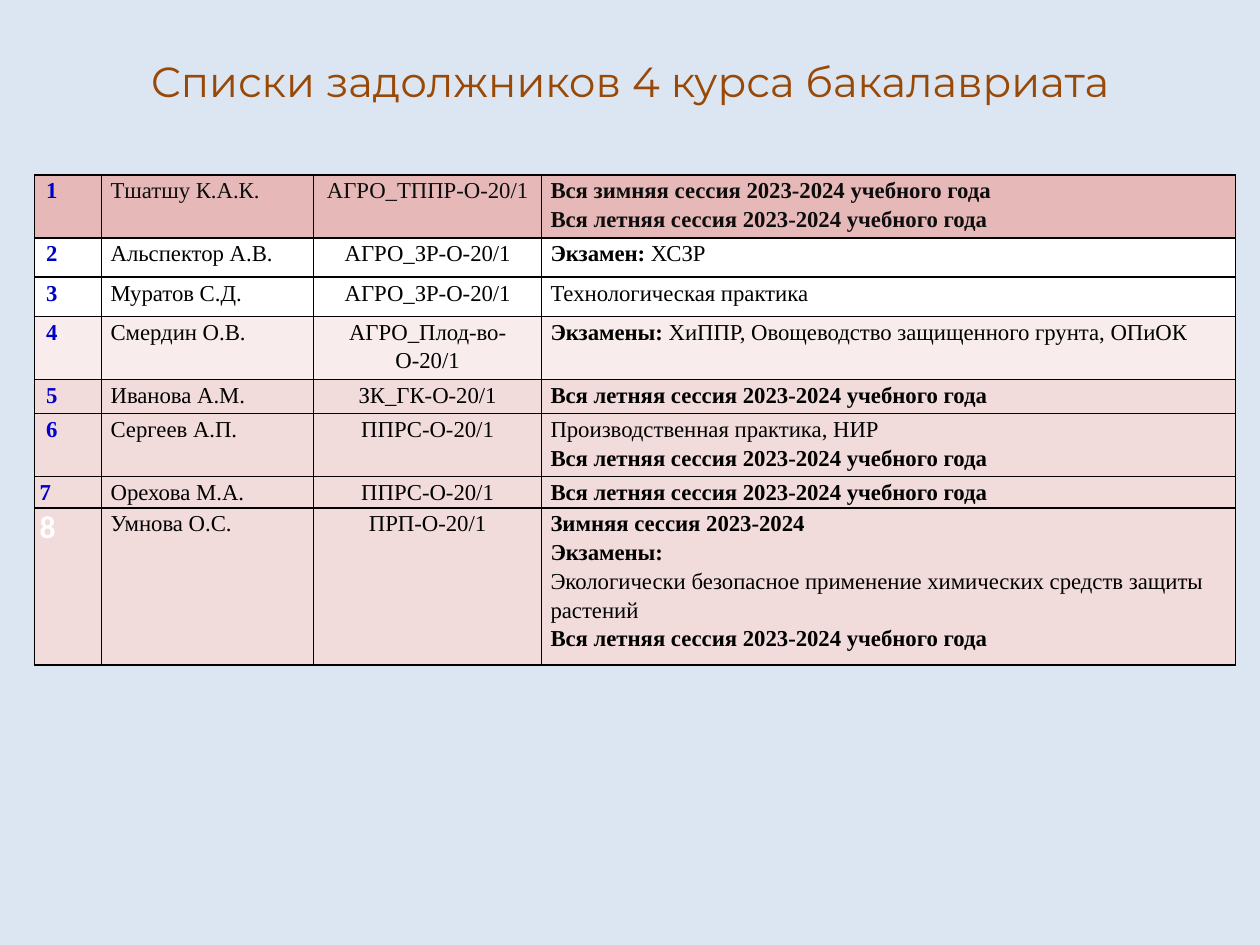
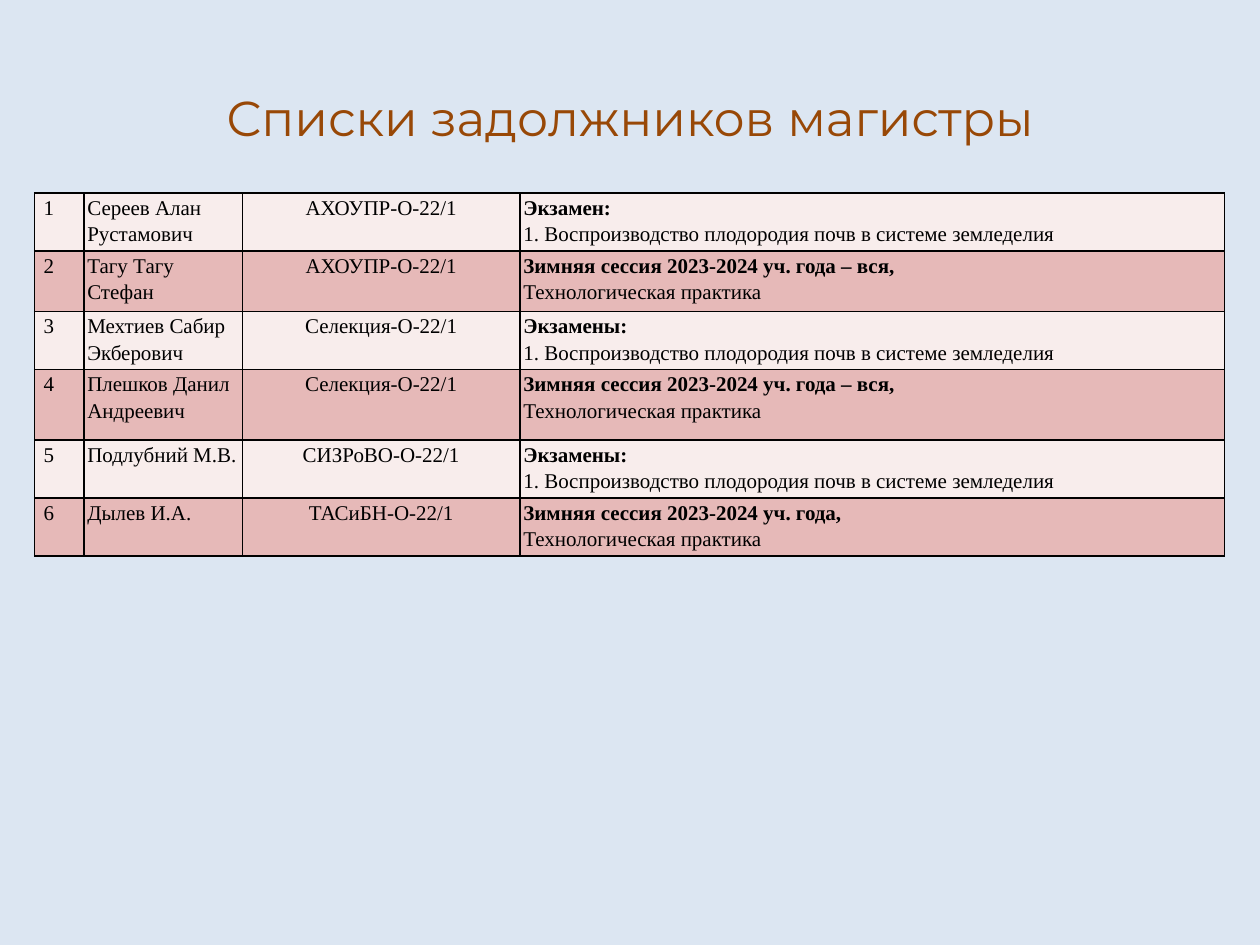
from dataclasses import dataclass

from lxml import etree
from pptx import Presentation
from pptx.dml.color import RGBColor as RGB
from pptx.enum.text import MSO_ANCHOR as ANCHOR, PP_ALIGN as ALIGN
from pptx.oxml.ns import qn
from pptx.util import Cm, Pt


@dataclass(frozen=True)
class Theme:
    background: str = "DCE6F2"
    title: str = "984807"
    ink: str = "000000"
    soft_ink: str = "0D0D0D"
    number: str = "0000CC"
    white: str = "FFFFFF"
    rose: str = "E6B9B8"
    pink: str = "F2DCDB"
    blush: str = "F8EDEC"
    title_font: str = "Montserrat"
    body_font: str = "Times New Roman"
    accent_font: str = "Calibri"
    accent_size: float = 18
    border_width: float = 1
    line_spacing: float = 1.15


T = Theme()
WINTER = "Зимняя сессия 2023-2024 уч. года"
SUMMER = ("Вся летняя сессия 2023-2024 учебного года", "")
PRACTICE = ("", "Технологическая практика")
SOIL = ("", "1. Воспроизводство плодородия почв в системе земледелия")

# Debts are paragraphs of (bold text, regular text).
# Rows: fill, height in cm, student, group, debts.
bachelors = [
    (T.rose, 1.16, "Тшатшу К.А.К.", "АГРО_ТППР-О-20/1",
     [("Вся зимняя сессия 2023-2024 учебного года", ""), SUMMER]),
    (T.white, 0.79, "Альспектор А.В.", "АГРО_ЗР-О-20/1",
     [("Экзамен: ", "ХСЗР")]),
    (T.white, 0.79, "Муратов С.Д.", "АГРО_ЗР-О-20/1", [PRACTICE]),
    (T.blush, 1.27, "Смердин О.В.", "АГРО_Плод-во-О-20/1",
     [("Экзамены: ", "ХиППР, Овощеводство защищенного грунта, ОПиОК")]),
    (T.pink, 0.69, "Иванова А.М.", "ЗК_ГК-О-20/1", [SUMMER]),
    (T.pink, 1.19, "Сергеев А.П.", "ППРС-О-20/1",
     [("", "Производственная практика, НИР"), SUMMER]),
    (T.pink, 0.64, "Орехова М.А.", "ППРС-О-20/1", [SUMMER]),
    (T.pink, 2.89, "Умнова О.С.", "ПРП-О-20/1",
     [("Зимняя сессия 2023-2024", ""), ("Экзамены:", ""),
      ("", "Экологически безопасное применение химических средств защиты растений"),
      SUMMER]),
]
masters = [
    (T.blush, 1.07, "Сереев Алан Рустамович", "АХОУПР-О-22/1",
     [("Экзамен:", ""), SOIL]),
    (T.rose, 1.22, "Тагу Тагу Стефан", "АХОУПР-О-22/1",
     [(WINTER + " – вся,", ""), PRACTICE]),
    (T.blush, 1.07, "Мехтиев Сабир Экберович", "Селекция-О-22/1",
     [("Экзамены:", ""), SOIL]),
    (T.rose, 1.42, "Плешков Данил Андреевич", "Селекция-О-22/1",
     [(WINTER + " – вся,", ""), PRACTICE]),
    (T.blush, 1.07, "Подлубний М.В.", "СИЗРоВО-О-22/1",
     [("Экзамены:", ""), SOIL]),
    (T.rose, 1.07, "Дылев И.А.", "ТАСиБН-О-22/1",
     [(WINTER + ",", ""), PRACTICE]),
]

slides = [
    dict(title="Списки задолжников 4 курса бакалавриата", title_size=24,
         title_box=(0, 0.03, 25.4, 3.18), top=3.53, size=13, inset=0.18,
         cols=(1.35, 4.27, 4.6, 13.99), rows=bachelors,
         number_inset=0.23, number_color=T.number, number_bold=True,
         flush_numbers=(7, 8), accent_numbers=(8,), soft_rows=(1,)),
    dict(title="Списки задолжников магистры", title_size=28,
         title_box=(1.27, 0.76, 22.86, 3.18), top=3.89, size=12, inset=0.07,
         cols=(0.99, 3.2, 5.59, 14.2), rows=masters,
         number_inset=0.18, number_color=T.ink, number_bold=False,
         flush_numbers=(), accent_numbers=(), soft_rows=()),
]


def write(tf, paragraphs, font, size, color, align=ALIGN.LEFT, spacing=None):
    """Fill a text frame with paragraphs of (bold text, regular text)."""
    for i, parts in enumerate(paragraphs):
        p = tf.paragraphs[0] if i == 0 else tf.add_paragraph()
        p.alignment = align
        p.line_spacing = spacing
        for text, bold in zip(parts, (True, False)):
            if text:
                r = p.add_run()
                r.text = text
                r.font.name, r.font.size, r.font.bold = font, Pt(size), bold
                r.font.color.rgb = RGB.from_string(color)


def style_cell(cell, fill, inset):
    """Give a cell its borders, fill and side margins."""
    cell.margin_left = cell.margin_right = Cm(inset)
    cell.margin_top = cell.margin_bottom = 0
    cell.vertical_anchor = ANCHOR.TOP
    props = cell._tc.get_or_add_tcPr()
    for side in ("a:lnL", "a:lnR", "a:lnT", "a:lnB"):
        ln = etree.SubElement(props, qn(side), w=str(Pt(T.border_width)))
        solid = etree.SubElement(ln, qn("a:solidFill"))
        etree.SubElement(solid, qn("a:srgbClr"), val=T.ink)
    cell.fill.solid()
    cell.fill.fore_color.rgb = RGB.from_string(fill)


prs = Presentation()
prs.slide_width, prs.slide_height = Cm(25.4), Cm(19.05)

for page in slides:
    s = prs.slides.add_slide(prs.slide_layouts[6])
    s.background.fill.solid()
    s.background.fill.fore_color.rgb = RGB.from_string(T.background)

    tf = s.shapes.add_textbox(*map(Cm, page["title_box"])).text_frame
    tf.word_wrap = True
    tf.vertical_anchor = ANCHOR.MIDDLE
    write(tf, [("", page["title"])], T.title_font, page["title_size"],
          T.title, ALIGN.CENTER)

    rows, cols = page["rows"], page["cols"]
    table = s.shapes.add_table(
        len(rows), len(cols), Cm(0.7), Cm(page["top"]), Cm(sum(cols)),
        Cm(sum(row[1] for row in rows))).table
    table.first_row = table.horz_banding = False
    for column, width in zip(table.columns, cols):
        column.width = Cm(width)

    for number, (fill, height, student, group, debts) in enumerate(rows, 1):
        row = table.rows[number - 1]
        row.height = Cm(height)
        number_cell, *text_cells = row.cells

        flush = number in page["flush_numbers"]
        style_cell(number_cell, fill, 0.1 if flush else page["number_inset"])
        label = (str(number), "") if page["number_bold"] else ("", str(number))
        if number in page["accent_numbers"]:
            write(number_cell.text_frame, [label], T.accent_font,
                  T.accent_size, T.white)
        else:
            write(number_cell.text_frame, [label], T.body_font, page["size"],
                  page["number_color"], spacing=T.line_spacing)

        ink = T.soft_ink if number in page["soft_rows"] else T.ink
        contents = ([("", student)], [("", group)], debts)
        aligns = (ALIGN.LEFT, ALIGN.CENTER, ALIGN.LEFT)
        for cell, paragraphs, align in zip(text_cells, contents, aligns):
            style_cell(cell, fill, page["inset"])
            write(cell.text_frame, paragraphs, T.body_font, page["size"], ink,
                  align, T.line_spacing)

prs.save("out.pptx")
